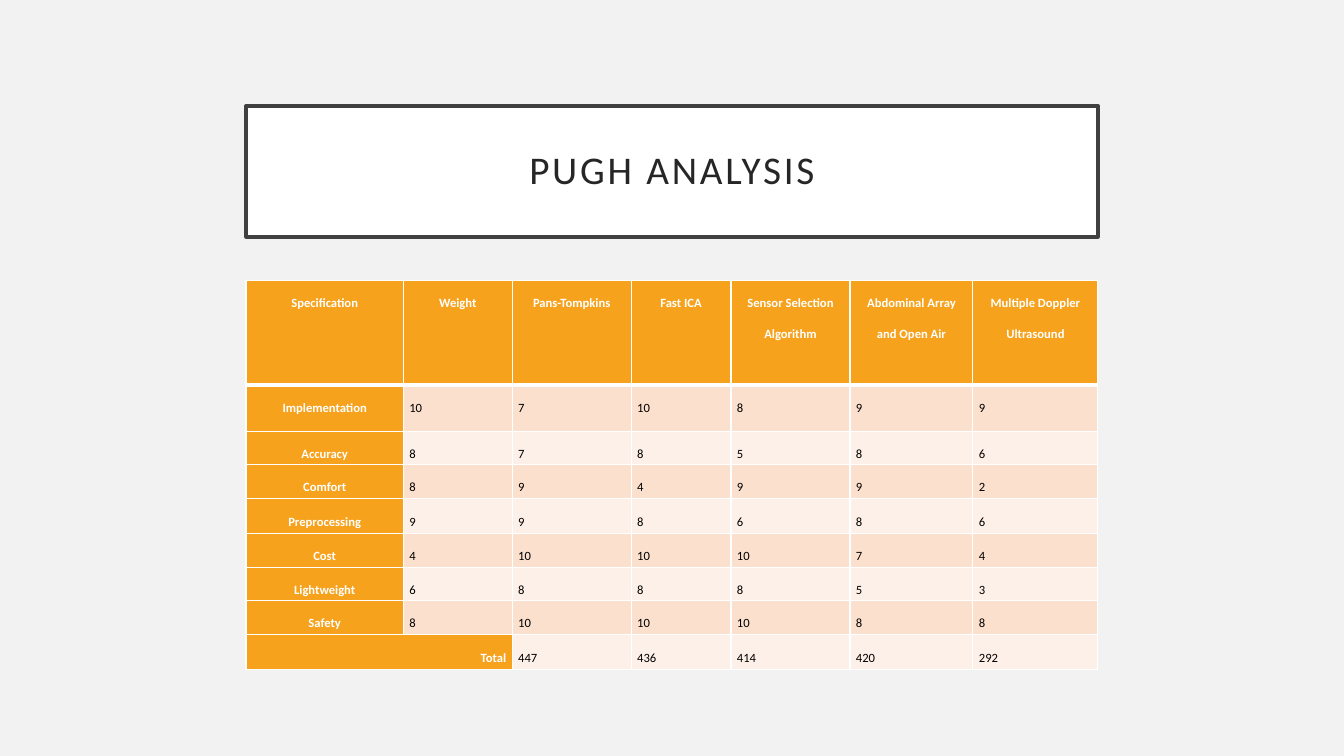
from lxml import etree
from pptx import Presentation
from pptx.dml.color import RGBColor
from pptx.enum import shapes, text
from pptx.oxml import ns
from pptx.util import Inches, Pt

BACKGROUND = RGBColor(0xF2, 0xF2, 0xF2)
WHITE = RGBColor(0xFF, 0xFF, 0xFF)
BLACK = RGBColor(0, 0, 0)
FRAME = RGBColor(0x40, 0x40, 0x40)
HEADING = RGBColor(0x26, 0x26, 0x26)
ORANGE = RGBColor(0xF6, 0xA2, 0x1D)
PEACH = RGBColor(0xFB, 0xE0, 0xCD)
CREAM = RGBColor(0xFD, 0xF0, 0xE8)

COLUMN_WIDTHS = [1.56, 1.08, 1.18, 0.99, 1.18, 1.22, 1.24]
ROW_HEIGHTS = [1.04, 0.46, 0.33, 0.34, 0.34, 0.34, 0.33, 0.34, 0.34]
SCORES = [
    ["Specification", "Weight", "Pans-Tompkins", "Fast ICA",
     "Sensor Selection Algorithm", "Abdominal Array and Open Air",
     "Multiple Doppler Ultrasound"],
    ["Implementation", 10, 7, 10, 8, 9, 9],
    ["Accuracy", 8, 7, 8, 5, 8, 6],
    ["Comfort", 8, 9, 4, 9, 9, 2],
    ["Preprocessing", 9, 9, 8, 6, 8, 6],
    ["Cost", 4, 10, 10, 10, 7, 4],
    ["Lightweight", 6, 8, 8, 8, 5, 3],
    ["Safety", 8, 10, 10, 10, 8, 8],
    ["Total", "", 447, 436, 414, 420, 292],
]


def write(frame, wording, *, size, color, align, line_spacing, bold=False, tracking=0):
    paragraph = frame.paragraphs[0]
    paragraph.alignment = align
    paragraph.line_spacing = line_spacing
    run = paragraph.add_run()
    run.text = wording
    run.font.name = "Calibri"
    run.font.size = Pt(size)
    run.font.bold = bold
    run.font.color.rgb = color
    if tracking:
        run.font._element.set("spc", str(tracking * 100))


def add_title(slide, wording):
    banner = slide.shapes.add_shape(
        shapes.MSO_SHAPE.RECTANGLE, Inches(2.44), Inches(1.05), Inches(8.45), Inches(1.3))
    banner.shadow.inherit = False
    banner.fill.solid()
    banner.fill.fore_color.rgb = WHITE
    banner.line.color.rgb = FRAME
    banner.line.width = Pt(2.5)
    frame = banner.text_frame
    frame.word_wrap = True
    frame.vertical_anchor = text.MSO_ANCHOR.MIDDLE
    frame.margin_left = frame.margin_right = Inches(0.2)
    frame.margin_top = frame.margin_bottom = Inches(0.2)
    write(frame, wording, size=28, color=HEADING, align=text.PP_ALIGN.CENTER,
          line_spacing=0.9, tracking=2)


def set_borders(cell, top=1, bottom=1):
    properties = cell._tc.get_or_add_tcPr()
    for side, width in (("L", 1), ("R", 1), ("T", top), ("B", bottom)):
        border = etree.SubElement(properties, ns.qn(f"a:ln{side}"), w=str(Pt(width)))
        fill = etree.SubElement(border, ns.qn("a:solidFill"))
        etree.SubElement(fill, ns.qn("a:srgbClr"), val=str(WHITE))


def style_cell(cell, fill, top, bottom):
    set_borders(cell, top, bottom)
    cell.fill.solid()
    cell.fill.fore_color.rgb = fill
    cell.margin_left = cell.margin_right = Inches(0.06)
    cell.margin_top = cell.margin_bottom = 0


def add_scores(slide):
    scores = slide.shapes.add_table(
        len(SCORES), len(COLUMN_WIDTHS),
        Inches(2.44), Inches(2.78), Inches(8.45), Inches(3.86)).table
    scores.first_row = scores.horz_banding = False
    for column, width in zip(scores.columns, COLUMN_WIDTHS):
        column.width = Inches(width)
    for row, height in zip(scores.rows, ROW_HEIGHTS):
        row.height = Inches(height)

    total = len(SCORES) - 1
    scores.cell(total, 0).merge(scores.cell(total, 1))
    for r, values in enumerate(SCORES):
        band = PEACH if r % 2 else CREAM
        for c, value in enumerate(values):
            cell = scores.cell(r, c)
            is_label = r == 0 or c == 0 or cell.is_spanned
            style_cell(cell, ORANGE if is_label else band,
                       top=3 if r == 1 else 1, bottom=3 if r == 0 else 1)
            if cell.is_spanned:
                continue
            if cell.is_merge_origin:
                align = text.PP_ALIGN.RIGHT
            else:
                align = text.PP_ALIGN.CENTER if is_label else text.PP_ALIGN.JUSTIFY
            write(cell.text_frame, str(value), size=9, color=WHITE if is_label else BLACK,
                  align=align, line_spacing=2.0, bold=is_label)


def main():
    deck = Presentation()
    deck.slide_width = Inches(13.33)
    deck.slide_height = Inches(7.5)
    slide = deck.slides.add_slide(deck.slide_layouts[6])
    slide.background.fill.solid()
    slide.background.fill.fore_color.rgb = BACKGROUND
    add_title(slide, "PUGH ANALYSIS")
    add_scores(slide)
    deck.save("out.pptx")


if __name__ == "__main__":
    main()
